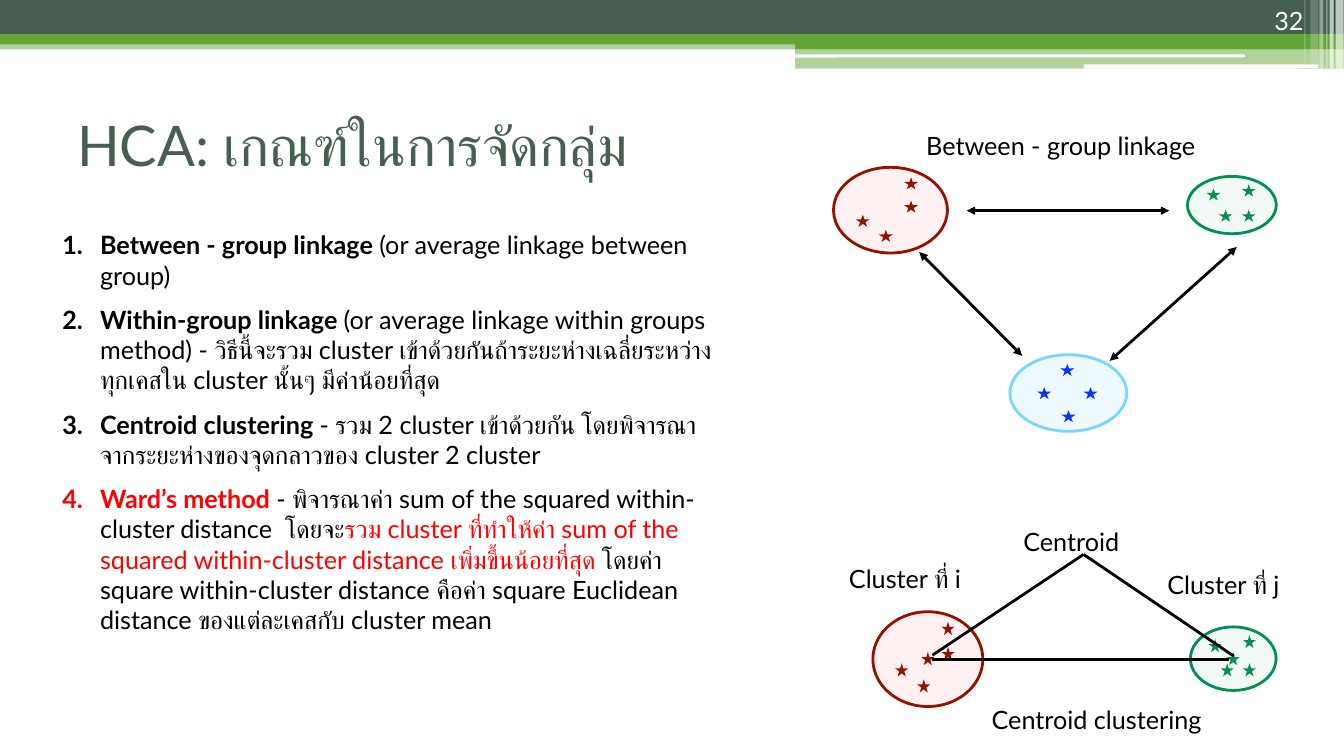
from lxml.etree import SubElement
from pptx import Presentation
from pptx.dml.color import RGBColor
from pptx.enum.shapes import MSO_CONNECTOR, MSO_SHAPE as Preset
from pptx.enum.text import MSO_ANCHOR as Anchor, MSO_AUTO_SIZE, PP_ALIGN as Align
from pptx.oxml.ns import qn
from pptx.util import Pt

DARK, GREEN, WHITE, BLACK, RED = "455F51", "63A537", "FFFFFF", "000000", "FF0000"

# (box, colour, opacity in percent)
BANDS = [
    ((0, 28.8, 960, 6.5), GREEN, 50),
    ((0, 0, 960, 24.5), DARK, 100),
    ((0, 24.5, 960, 7.2), GREEN, 100),
    ((568, 28, 392, 7.2), GREEN, 100),
    ((568, 34.6, 392, 14.4), GREEN, 50),
]
ROUNDED_BARS = [
    ((567.4, 38.9, 321.8, 2.2), WHITE, 100),
    ((774, 46.1, 167.8, 2.9), WHITE, 100),
]
# (left, width, height, opacity)
STRIPES = [
    (954, 5.8, 49, 65), (949.7, 2.9, 49, 65), (947.5, 0.7, 49, 60),
    (942.5, 2.9, 49, 40), (936, 5.8, 46, 20), (931.7, 0.7, 46, 30),
]

TITLE = "HCA: เกณฑ์ในการจัดกลุ่ม"
PAGE = "32"
# Each method is a list of (text, colour, bold)
METHODS = [
    [("Between - group linkage ", BLACK, True),
     ("(or average linkage between group)", BLACK, False)],
    [("Within-group linkage ", BLACK, True),
     ("(or average linkage within groups method) - วิธีนี้จะรวม cluster "
      "เข้าด้วยกันถ้าระยะห่างเฉลี่ยระหว่างทุกเคสใน cluster นั้นๆ มีค่าน้อยที่สุด", BLACK, False)],
    [("Centroid clustering ", BLACK, True),
     ("- รวม 2 cluster เข้าด้วยกัน โดยพิจารณาจากระยะห่างของจุดกลาวของ cluster 2 cluster",
      BLACK, False)],
    [("Ward’s method ", RED, True),
     ("- พิจารณาค่า sum of the squared within-cluster distance  โดยจะ", BLACK, False),
     ("รวม cluster ที่ทำให้ค่า sum of the squared within-cluster distance "
      "เพิ่มขึ้นน้อยที่สุด", RED, False),
     (" โดยค่า square within-cluster distance คือค่า square Euclidean distance "
      "ของแต่ละเคสกับ cluster mean", BLACK, False)],
]

# name: (fill, opacity, outline, star colour)
PALETTE = {
    "red": ("FF7E79", 10, "941100", "941100"),
    "green": ("0B764B", 5, "009051", "009051"),
    "blue": ("76D6FF", 13, "76D6FF", "0433FF"),
}
LINKAGE = {
    "star": (10, 8.6),
    "arrows": True,
    "clusters": [
        ("blue", (721.4, 253.4, 83.5, 54.7),
         [(758.2, 293), (757.4, 259.9), (774, 276.5), (740.9, 276.5)]),
        ("red", (595.4, 119.5, 81.4, 61.2),
         [(645.8, 143.3), (611.3, 153.4), (645.8, 126.7), (627.8, 164.2)]),
        ("green", (848.2, 126, 63.4, 41),
         [(887, 149.8), (887, 131.8), (870.5, 149.8), (861.8, 134.6)]),
    ],
    "lines": [(690.5, 150.5, 835.2, 150.5), (792.7, 257.8, 883.4, 176.4),
              (656.6, 180, 730.1, 254.2)],
    "labels": [("Between - group linkage", (631.4, 83.5, 252.7, 40.3), Align.CENTER)],
}
CENTROID = {
    "star": (9.4, 9.4),
    "arrows": False,
    "clusters": [
        ("red", (623.5, 437, 78.5, 67.7),
         [(672.5, 462.2), (639.4, 473.8), (672.5, 444.2), (655.2, 485.3), (658.1, 465.8)]),
        ("green", (850.3, 447.8, 61.2, 45.4),
         [(887.8, 473.8), (887.8, 453.6), (871.9, 473.8), (863.3, 456.5), (876.2, 465.8)]),
    ],
    "lines": [(666, 468, 774, 396), (881.3, 468.7, 774, 396), (666, 470.9, 877.7, 470.9)],
    "labels": [
        ("Cluster ที่ i", (601.9, 398.2, 113, 29.5), Align.LEFT),
        ("Cluster ที่ j", (829.4, 393.8, 103, 47.5), Align.LEFT),
        ("Centroid", (726.5, 370, 85.7, 33.8), Align.LEFT),
        ("Centroid clustering", (695.5, 496, 175.7, 36), Align.CENTER),
    ],
}
LABEL_FRAME = {
    "vertical_anchor": Anchor.MIDDLE,
    "margin_left": Pt(4.5), "margin_right": Pt(4.5),
    "margin_top": Pt(4.5), "margin_bottom": Pt(4.5),
}


def set_all(target, values):
    for name, value in values.items():
        setattr(target, name, value)


def paint(fill, colour, opacity=100):
    fill.solid()
    fill.fore_color.rgb = RGBColor.from_string(colour)
    if opacity < 100:
        tint = fill._xPr.find(qn("a:solidFill"))[0]
        SubElement(tint, qn("a:alpha"), val=str(opacity * 1000))


def draw(shapes, preset, box, colour, opacity=100, outline=None):
    shape = shapes.add_shape(preset, *map(Pt, box))
    shape.shadow.inherit = False
    paint(shape.fill, colour, opacity)
    if outline:
        paint(shape.line.fill, outline)
        shape.line.width = Pt(2)
    else:
        shape.line.fill.background()


def connect(shapes, ends, arrows):
    line = shapes.add_connector(MSO_CONNECTOR.STRAIGHT, *map(Pt, ends))
    paint(line.line.fill, BLACK)
    line.line.width = Pt(2)
    if arrows:
        for end in ("a:headEnd", "a:tailEnd"):
            SubElement(line.line._ln, qn(end), type="triangle")
    SubElement(line._element.spPr, qn("a:effectLst"))


def add_run(paragraph, text, size, colour, bold=False):
    run = paragraph.add_run()
    run.text = text
    set_all(run.font, {"name": "Lato", "size": Pt(size), "bold": bold})
    paint(run.font.fill, colour)


def text_frame(shapes, box, frame_values):
    frame = shapes.add_textbox(*map(Pt, box)).text_frame
    set_all(frame, {"word_wrap": True, **frame_values})
    return frame


def write(shapes, text, box, frame_values, size=18, colour=BLACK, align=Align.LEFT):
    paragraph = text_frame(shapes, box, frame_values).paragraphs[0]
    paragraph.alignment = align
    add_run(paragraph, text, size, colour)


def list_methods(shapes, box):
    frame = text_frame(shapes, box, {"auto_size": MSO_AUTO_SIZE.SHAPE_TO_FIT_TEXT})
    for number, method in enumerate(METHODS):
        paragraph = frame.add_paragraph() if number else frame.paragraphs[0]
        paragraph.space_after = Pt(10)
        props = paragraph._p.get_or_add_pPr()
        props.set("marL", str(Pt(27)))
        props.set("indent", str(-Pt(27)))
        SubElement(props, qn("a:buFont"), typeface="+mj-lt")
        SubElement(props, qn("a:buAutoNum"), type="arabicPeriod")
        for text, colour, bold in method:
            add_run(paragraph, text, 18, colour, bold)


def draw_diagram(slide, diagram):
    shapes = slide.shapes.add_group_shape().shapes
    for name, ellipse, stars in diagram["clusters"]:
        fill, opacity, outline, star_colour = PALETTE[name]
        draw(shapes, Preset.OVAL, ellipse, fill, opacity, outline)
        for corner in stars:
            draw(shapes, Preset.STAR_5_POINT, corner + diagram["star"], star_colour)
    for ends in diagram["lines"]:
        connect(shapes, ends, diagram["arrows"])
    for text, box, align in diagram["labels"]:
        write(shapes, text, box, LABEL_FRAME, align=align)


def main():
    deck = Presentation()
    set_all(deck, {"slide_width": Pt(960), "slide_height": Pt(540)})
    slide = deck.slides.add_slide(deck.slide_layouts[6])
    shapes = slide.shapes
    for band in BANDS:
        draw(shapes, Preset.RECTANGLE, *band)
    for bar in ROUNDED_BARS:
        draw(shapes, Preset.ROUNDED_RECTANGLE, *bar)
    for left, width, height, opacity in STRIPES:
        draw(shapes, Preset.RECTANGLE, (left, 0, width, height), WHITE, opacity)
    write(shapes, TITLE, (48, 61.2, 864, 84.2), {"vertical_anchor": Anchor.MIDDLE}, 40, DARK)
    write(shapes, PAGE, (858.2, 0, 80, 28.8), {"vertical_anchor": Anchor.BOTTOM},
          colour=WHITE, align=Align.RIGHT)
    list_methods(shapes, (37.4, 160.6, 480, 321))
    for diagram in (LINKAGE, CENTROID):
        draw_diagram(slide, diagram)
    deck.save("out.pptx")


if __name__ == "__main__":
    main()
